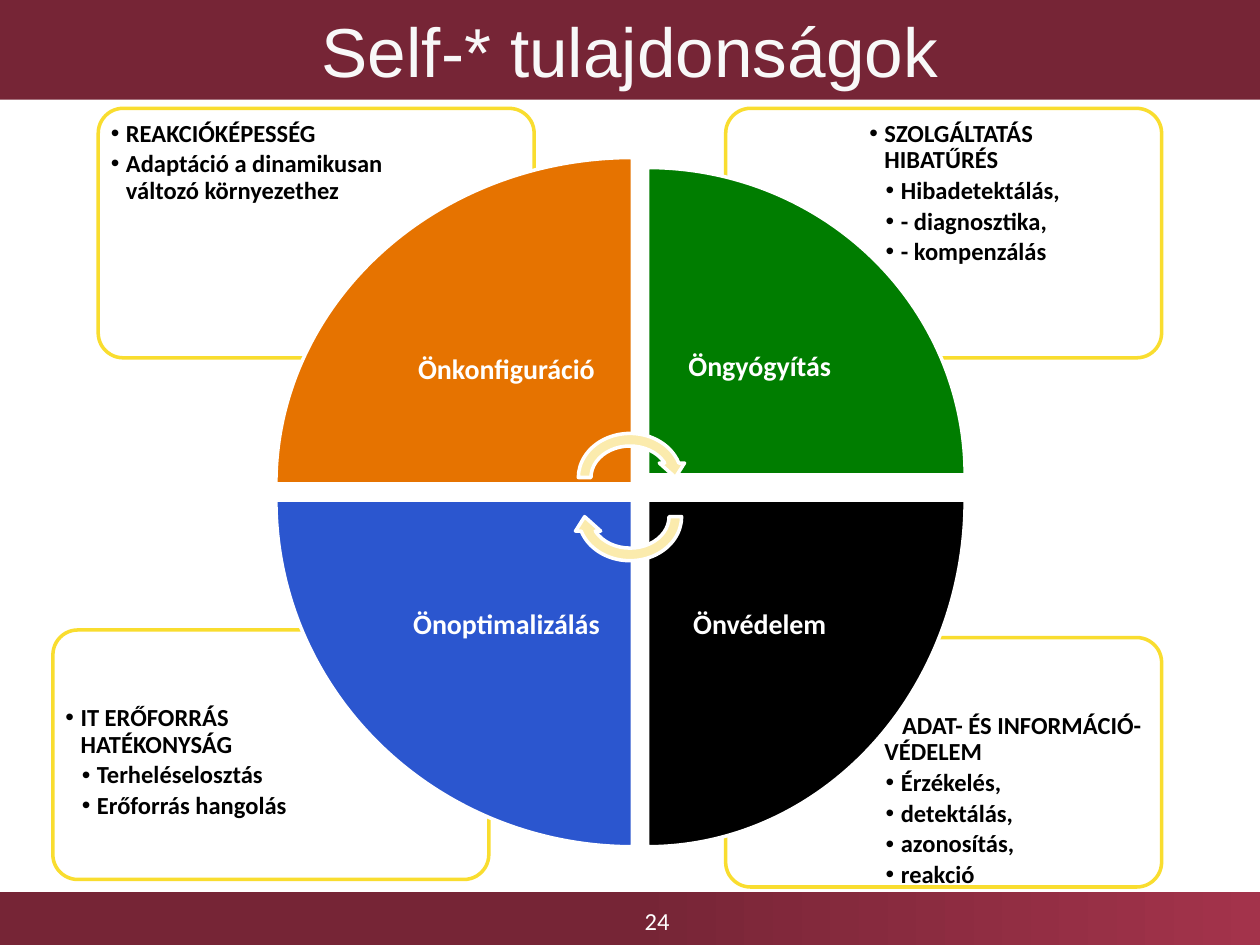
from lxml.etree import SubElement
from pptx import Presentation
from pptx.dml.color import RGBColor
from pptx.enum.shapes import MSO_SHAPE
from pptx.enum.text import MSO_ANCHOR, PP_ALIGN
from pptx.oxml.ns import qn
from pptx.util import Inches, Pt

COLS, ROWS = 100, 75
WINE, YELLOW, CREAM, WHITE = "762536", "F9DD2F", "FBEBAD", "FFFFFF"

# left, top, then (level, text); level 0 has no bullet
PANELS = [
    (57.6, 50.6, [(0, "ADAT- ÉS INFORMÁCIÓ- VÉDELEM"), (2, "Érzékelés,"),
                  (2, "detektálás,"), (2, "azonosítás,"), (2, "reakció")]),
    (4.2, 50, [(1, "IT ERŐFORRÁS HATÉKONYSÁG"), (2, "Terheléselosztás"),
               (2, "Erőforrás hangolás")]),
    (57.6, 8.6, [(1, "SZOLGÁLTATÁS HIBATŰRÉS"), (2, "Hibadetektálás,"),
                 (2, "- diagnosztika,"), (2, "- kompenzálás")]),
    (7.8, 8.6, [(1, "REAKCIÓKÉPESSÉG"),
                (1, "Adaptáció a dinamikusan változó környezethez")]),
]
# wedge area, turn, colour, label, label area
WEDGES = [
    ((21.9, 12.5, 28.3, 25.9), 0, "E67300", "Önkonfiguráció", (30.2, 20.1, 20, 18.3)),
    ((51.8, 12.9, 24.4, 25.2), 90, "007D00", "Öngyógyítás", (51.4, 20.4, 17.8, 17.2)),
    ((51.4, 39.7, 25.2, 27.5), 180, "000000", "Önvédelem", (51.4, 39.7, 17.8, 19.5)),
    ((22.3, 39.3, 27.5, 28.3), 270, "2B56CF", "Önoptimalizálás", (30.2, 39.7, 20, 19.5)),
]


def tint(code):
    return RGBColor.from_string(code)


class Deck:
    """Holds the style and the current slide; areas are (left, top, width, height) in grid units."""

    def __init__(self):
        self.prs = Presentation()
        self.prs.slide_width, self.prs.slide_height = Inches(10), Inches(7.5)
        self.slide = self.prs.slides.add_slide(self.prs.slide_layouts[6])
        self.font = "Calibri"

    def place(self, area):
        col, row = self.prs.slide_width / COLS, self.prs.slide_height / ROWS
        left, top, wide, high = area
        return [round(n) for n in (left * col, top * row, wide * col, high * row)]

    def shape(self, kind, area, fill, line=None, turn=0):
        item = self.slide.shapes.add_shape(kind, *self.place(area))
        item.shadow.inherit = False
        item.rotation = turn
        item.fill.solid()
        item.fill.fore_color.rgb = tint(fill)
        if line:
            item.line.color.rgb = tint(line)
            item.line.width = Pt(2)
        else:
            item.line.fill.background()
        return item

    def letter(self, para, text, size, color, bold=False, font=None):
        para.text = text
        for run in para.runs:
            run.font.name = font or self.font
            run.font.size = Pt(size)
            run.font.bold = bold
            run.font.color.rgb = tint(color)

    def frame(self, area, inset):
        frame = self.slide.shapes.add_textbox(*self.place(area)).text_frame
        frame.word_wrap = True
        frame.margin_left = frame.margin_right = Inches(inset)
        frame.margin_top = frame.margin_bottom = Inches(inset)
        return frame

    def center(self, frame, text, size, color, bold=False, font=None):
        frame.vertical_anchor = MSO_ANCHOR.MIDDLE
        para = frame.paragraphs[0]
        para.alignment = PP_ALIGN.CENTER
        self.letter(para, text, size, color, bold, font)

    def label(self, area, text, size, bold=False, inset=0.12):
        self.center(self.frame(area, inset), text, size, WHITE, bold)

    def title(self, area, text):
        bar = self.shape(MSO_SHAPE.RECTANGLE, area, WINE)
        self.center(bar.text_frame, text, 39.6, "F8F8F8", font="Arial")

    def footer(self, area, text):
        bar = self.shape(MSO_SHAPE.RECTANGLE, area, WINE)
        bar.fill.gradient()
        bar.fill.gradient_angle = 0
        for stop, spot, code in zip(bar.fill.gradient_stops, (0.5, 1), (WINE, "A3334B")):
            stop.position = spot
            stop.color.rgb = tint(code)
        self.label((35.9, 71.1, 32.5, 3.9), text, 14, inset=0.05)

    def bullet(self, para, level):
        props = para._p.get_or_add_pPr()
        props.set("marL", str(Inches(0.25 if level == 2 else 0.12)))
        props.set("indent", str(Inches(-0.12 if level else 0.14)))
        para.line_spacing = 0.9
        para.space_after = Pt(2.4)
        if level:
            SubElement(props, qn("a:buFont"), typeface="Arial")
            SubElement(props, qn("a:buChar"), char="•")
        else:
            SubElement(props, qn("a:buNone"))

    def panel(self, left, top, lines):
        box = self.shape(MSO_SHAPE.ROUNDED_RECTANGLE, (left, top, 34.6, 19.8), WHITE, YELLOW)
        box.adjustments[0] = 0.1
        inner = left + (10.8 if left > COLS / 2 else 0.4)
        upper = top + (5.4 if top > ROWS / 2 else 0.4)
        frame = self.frame((inner, upper, 23.4, 13.9), 0.06)
        for spot, (level, text) in enumerate(lines):
            para = frame.add_paragraph() if spot else frame.paragraphs[0]
            self.bullet(para, level)
            self.letter(para, text, 14, "000000", True)


def main():
    deck = Deck()
    deck.footer((0, 70.8, COLS, 4.2), "24")
    deck.title((0, 0, COLS, 7.9), "Self-* tulajdonságok")
    for left, top, lines in PANELS:
        deck.panel(left, top, lines)
    for area, turn, fill, text, spot in WEDGES:
        deck.shape(MSO_SHAPE.PIE_WEDGE, area, fill, WHITE, turn)
        deck.label(spot, text, 16, True)
    for top, turn in ((33.9, 0), (37, 180)):
        deck.shape(MSO_SHAPE.CIRCULAR_ARROW, (45.4, top, 9.2, 8), CREAM, WHITE, turn)
    deck.prs.save("out.pptx")


if __name__ == "__main__":
    main()
